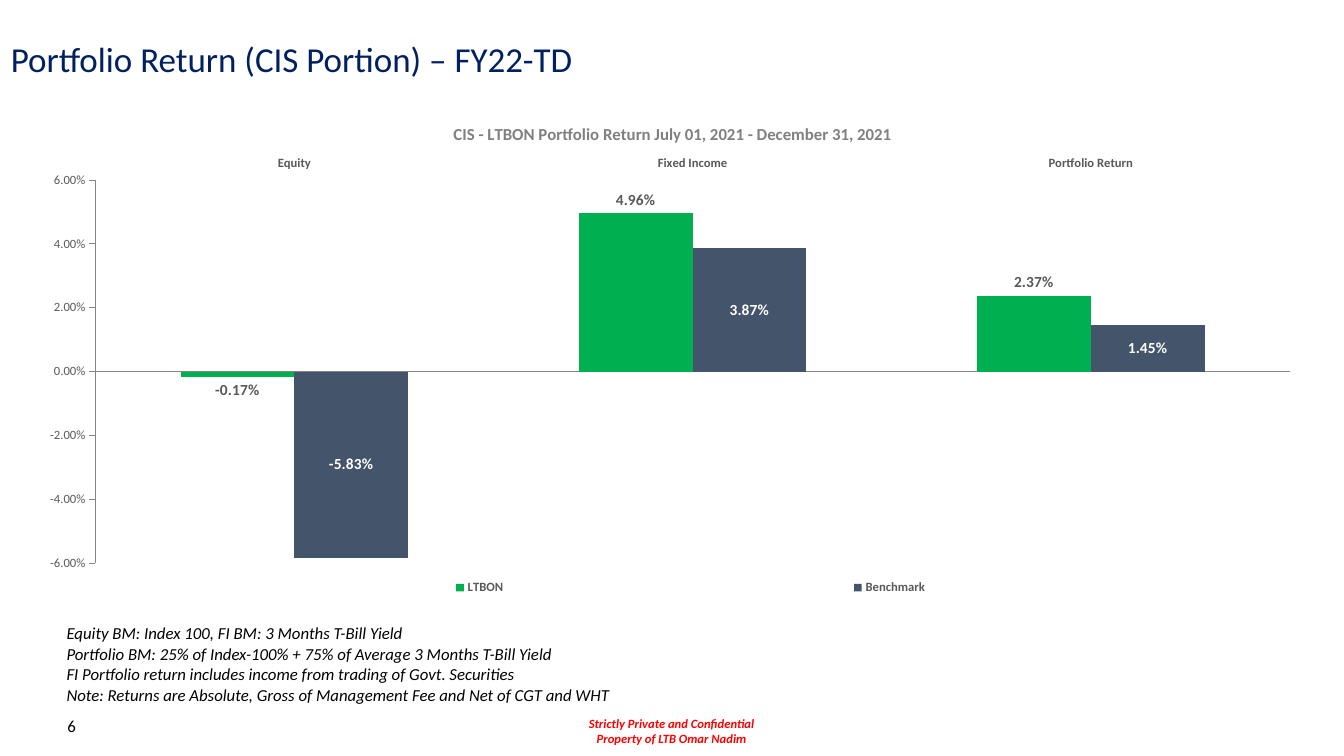
"""Builds the portfolio return slide: a column chart with notes and a footer."""
from lxml import etree
from pptx import Presentation
from pptx.chart.data import CategoryChartData
from pptx.dml.color import RGBColor
from pptx.enum.chart import XL_CHART_TYPE, XL_LABEL_POSITION, XL_LEGEND_POSITION, XL_TICK_LABEL_POSITION, XL_TICK_MARK
from pptx.enum.text import MSO_ANCHOR, PP_ALIGN
from pptx.oxml.ns import qn
from pptx.util import Inches, Pt

COLUMNS = XL_CHART_TYPE.COLUMN_CLUSTERED
OUTSIDE, CENTRED = XL_LABEL_POSITION.OUTSIDE_END, XL_LABEL_POSITION.CENTER
LEFT, CENTER, RIGHT = PP_ALIGN.LEFT, PP_ALIGN.CENTER, PP_ALIGN.RIGHT
TOP, MIDDLE, BOTTOM = MSO_ANCHOR.TOP, MSO_ANCHOR.MIDDLE, MSO_ANCHOR.BOTTOM

THEME = {
    "font": "Calibri", "percent": "0.00%", "axis": "868686",
    "heading": {"size": 25, "color": "002060"},
    "number": {"size": 12, "color": "000000"},
    "notes": {"size": 12, "color": "000000", "italic": True},
    "footer": {"size": 9, "color": "FF0000", "bold": True, "italic": True},
    "chart": {"size": 9, "color": "595959"},
    "chart_bold": {"size": 9, "color": "595959", "bold": True},
    "chart_title": {"size": 12, "color": "808080", "bold": True},
    "dark_label": {"size": 11, "color": "595959", "bold": True},
    "light_label": {"size": 11, "color": "FFFFFF", "bold": True},
}

TEXTS = [
    (("Strictly Private and Confidential", "Property of LTB Omar Nadim"),
     (5.73, 7.05, 1.86, 0.4), "footer", CENTER, TOP, False),
    (("6",), (0.24, 7, 0.61, 0.4), "number", RIGHT, MIDDLE, True),
    (("Portfolio Return (CIS Portion) – FY22-TD",),
     (0.01, 0.28, 10, 0.6), "heading", LEFT, MIDDLE, True),
]
NOTES = [
    "Equity BM: Index 100, FI BM: 3 Months T-Bill Yield",
    "Portfolio BM: 25% of Index-100% + 75% of Average 3 Months T-Bill Yield",
    "FI Portfolio return includes income from trading of Govt. Securities",
    "Note: Returns are Absolute, Gross of Management Fee and Net of CGT and WHT",
]
NOTES_PLACE = (0.66, 6.19, 6.33, 0.81)
CHART_PLACE = (0.24, 0.98, 12.81, 5.08)
CHART_TITLE = "CIS - LTBON Portfolio Return July 01, 2021 - December 31, 2021"
CATEGORIES = ["Equity", "Fixed Income", "Portfolio Return"]
SERIES = [
    ("LTBON", (-0.0017, 0.0496, 0.0237), "00B050", OUTSIDE, "dark_label"),
    ("Benchmark", (-0.0583, 0.0387, 0.0145), "44546A", CENTRED, "light_label"),
]
LAYOUTS = [
    ("title", 1, {"x": 0.33, "y": 0.04}),
    ("plotArea", 0, {"x": 0.055, "y": 0.159, "w": 0.925, "h": 0.748}),
    ("legend", 1, {"x": 0.066, "y": 0.93, "w": 0.9, "h": 0.05}),
]


def style(font, role):
    """Applies the theme's format values for a role to a font."""
    values = {"name": THEME["font"], "bold": False, "italic": False, **THEME[role]}
    font.color.rgb = RGBColor.from_string(values.pop("color"))
    values["size"] = Pt(values["size"])
    for name, value in values.items():
        setattr(font, name, value)


def write(frame, lines, role, align):
    """Writes one paragraph per line."""
    for index, line in enumerate(lines):
        para = frame.paragraphs[0] if index == 0 else frame.add_paragraph()
        para.alignment = align
        span = para.add_run()
        span.text = line
        style(span.font, role)


def add_text(page, lines, place, role, align, anchor, wrap):
    """Adds a text box."""
    frame = page.shapes.add_textbox(*map(Inches, place)).text_frame
    frame.word_wrap = wrap
    frame.vertical_anchor = anchor
    write(frame, lines, role, align)


def add_notes(page):
    """Adds the one-cell table of notes."""
    table = page.shapes.add_table(1, 1, *map(Inches, NOTES_PLACE)).table
    table.first_row = table.horz_banding = False
    cell = table.cell(0, 0)
    cell.fill.background()
    cell.vertical_anchor = BOTTOM
    for side in ("left", "top", "right", "bottom"):
        setattr(cell, f"margin_{side}", 0)
    write(cell.text_frame, NOTES, "notes", LEFT)


def place_part(chart, tag, position, fractions):
    """Gives a chart part a manual layout in fractions of the chart."""
    part = chart.element.find(".//" + qn(f"c:{tag}")) if hasattr(chart, "element") else chart._chartSpace.find(".//" + qn(f"c:{tag}"))
    for old in part.findall(qn("c:layout")):
        part.remove(old)
    layout = etree.Element(qn("c:layout"))
    manual = etree.SubElement(layout, qn("c:manualLayout"))
    values = {"layoutTarget": "inner"} if tag == "plotArea" else {}
    values.update({"xMode": "edge", "yMode": "edge", **fractions})
    for name, value in values.items():
        etree.SubElement(manual, qn(f"c:{name}")).set("val", str(value))
    part.insert(position, layout)


def add_chart(page):
    """Adds the clustered column chart."""
    data = CategoryChartData(number_format=THEME["percent"])
    data.categories = CATEGORIES
    for name, values, *_ in SERIES:
        data.add_series(name, values)
    chart = page.shapes.add_chart(COLUMNS, *map(Inches, CHART_PLACE), data).chart
    style(chart.font, "chart")
    chart.has_title = True
    write(chart.chart_title.text_frame, [CHART_TITLE], "chart_title", CENTER)
    chart.has_legend = True
    chart.legend.position = XL_LEGEND_POSITION.BOTTOM
    chart.legend.include_in_layout = False
    style(chart.legend.font, "chart_bold")

    ticks = [(chart.category_axis, XL_TICK_MARK.NONE, XL_TICK_LABEL_POSITION.HIGH, "chart_bold"),
             (chart.value_axis, XL_TICK_MARK.OUTSIDE, XL_TICK_LABEL_POSITION.LOW, "chart")]
    for axis, mark, position, role in ticks:
        axis.has_major_gridlines = False
        axis.major_tick_mark = mark
        axis.minor_tick_mark = XL_TICK_MARK.NONE
        axis.tick_label_position = position
        axis.format.line.color.rgb = RGBColor.from_string(THEME["axis"])
        axis.format.line.width = Pt(0.75)
        style(axis.tick_labels.font, role)
    scale = chart.value_axis
    scale.minimum_scale, scale.maximum_scale, scale.major_unit = -0.06, 0.06, 0.02
    scale.tick_labels.number_format = THEME["percent"]
    scale.tick_labels.number_format_is_linked = False

    plot = chart.plots[0]
    plot.gap_width, plot.overlap, plot.vary_by_categories = 150, 0, False
    for series, (_, _, color, position, role) in zip(plot.series, SERIES):
        series.invert_if_negative = False
        series.format.fill.solid()
        series.format.fill.fore_color.rgb = RGBColor.from_string(color)
        labels = series.data_labels
        labels.show_value = True
        labels.number_format = THEME["percent"]
        labels.number_format_is_linked = False
        labels.position = position
        style(labels.font, role)
    for tag, position, fractions in LAYOUTS:
        place_part(chart, tag, position, fractions)


def main():
    """Builds and saves the deck."""
    deck = Presentation()
    deck.slide_width, deck.slide_height = Inches(13.33), Inches(7.5)
    page = deck.slides.add_slide(deck.slide_layouts[6])
    for text in TEXTS:
        add_text(page, *text)
    add_notes(page)
    add_chart(page)
    deck.save("out.pptx")


if __name__ == "__main__":
    main()
